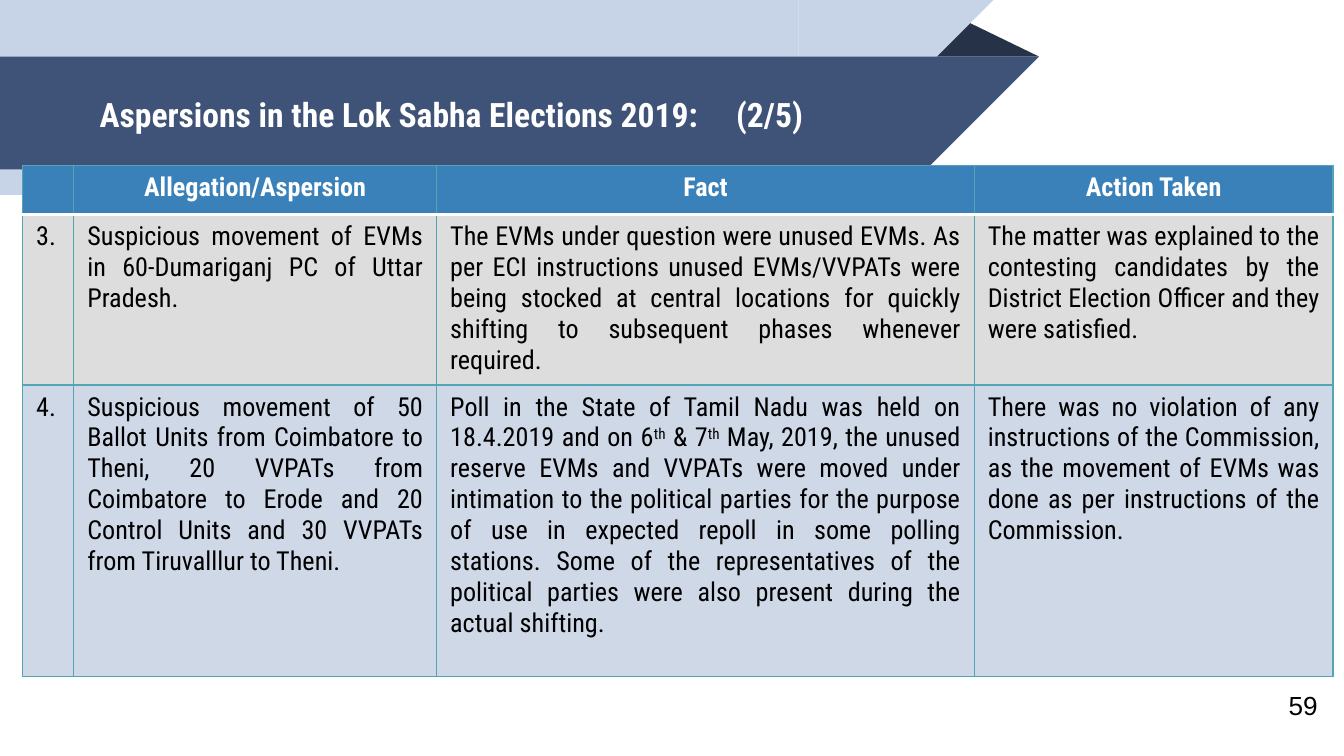
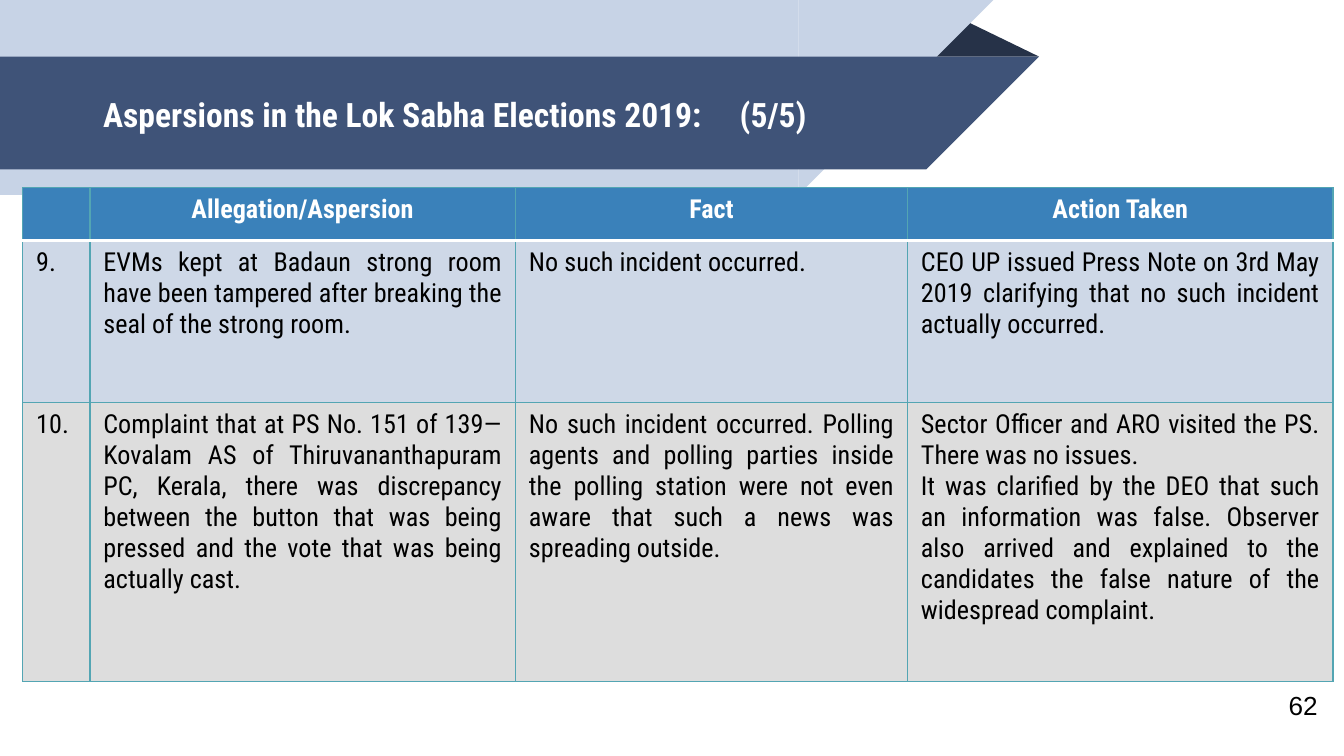
from dataclasses import dataclass
from typing import Any

from lxml import etree
from pptx import Presentation
from pptx.dml.color import RGBColor
from pptx.enum.shapes import MSO_SHAPE
from pptx.enum.text import MSO_ANCHOR, PP_ALIGN
from pptx.oxml.ns import qn
from pptx.util import Pt

RECT, WEDGE, FOLD = MSO_SHAPE.RECTANGLE, MSO_SHAPE.RIGHT_TRIANGLE, MSO_SHAPE.ISOSCELES_TRIANGLE
LEFT, CENTER, JUSTIFY = PP_ALIGN.LEFT, PP_ALIGN.CENTER, PP_ALIGN.JUSTIFY
MIDDLE = MSO_ANCHOR.MIDDLE

# Palette and type
DARK, NAVY, PALE = "263248", "3F5378", "C7D3E6"
BLUE, GREY, MIST, TEAL = "3A81BA", "DDDDDD", "CED8E7", "53A5B3"
WHITE, BLACK = "FFFFFF", "000000"
HEAD = {"name": "Roboto Condensed", "size": Pt(18), "bold": True}
LABEL = {"name": "Roboto Condensed", "size": Pt(14), "bold": True}
BODY = {"name": "Roboto Condensed", "size": Pt(14), "bold": False}
FOOT = {"name": "Arial", "size": Pt(14)}
PAD = {side: Pt(7.2) for side in
       ("margin_left", "margin_top", "margin_right", "margin_bottom")}
TITLE = "Aspersions in the Lok Sabha Elections 2019:"
HEADS = ("", "Allegation/Aspersion", "Fact", "Action Taken")


@dataclass
class Band:
    """A strip from the left edge that ends in a slanted wedge."""
    top: float
    width: float
    height: float
    color: str


@dataclass
class Row:
    height: float
    fill: str
    cells: tuple[str, ...]


@dataclass
class Page:
    count: str
    number: str
    left: float
    top: float
    cols: tuple[float, ...]
    head: float
    rows: tuple[Row, ...]


BANDS = (Band(0, 427.7, 104.4, PALE), Band(30.3, 496.1, 60.5, NAVY))

PAGES = (
    Page("(2/5)", "59", 46.3, 88.5, (27.4, 194.4, 288, 192.2), 26.5, (
        Row(90, GREY, (
            "3.",
            "Suspicious movement of EVMs in 60-Dumariganj PC of Uttar Pradesh.",
            "The EVMs under question were unused EVMs. As per ECI instructions "
            "unused EVMs/VVPATs were being stocked at central locations for "
            "quickly shifting to subsequent phases whenever required.",
            "The matter was explained to the contesting candidates by the "
            "District Election Officer and they were satisfied.")),
        Row(156, MIST, (
            "4.",
            "Suspicious movement of 50 Ballot Units from Coimbatore to Theni, "
            "20 VVPATs from Coimbatore to Erode and 20 Control Units and "
            "30 VVPATs from Tiruvalllur to Theni.",
            "Poll in the State of Tamil Nadu was held on 18.4.2019 and on "
            "6^th^ & 7^th^ May, 2019, the unused reserve EVMs and VVPATs were "
            "moved under intimation to the political parties for the purpose "
            "of use in expected repoll in some polling stations. Some of the "
            "representatives of the political parties were also present "
            "during the actual shifting.",
            "There was no violation of any instructions of the Commission, as "
            "the movement of EVMs was done as per instructions of the "
            "Commission.")))),
    Page("(5/5)", "62", 48.2, 100.6, (36, 228, 210, 228), 28.2, (
        Row(87, MIST, (
            "9.",
            "EVMs kept at Badaun strong room have been tampered after breaking "
            "the seal of the strong room.",
            "No such incident occurred.",
            "CEO UP issued Press Note on 3rd May 2019 clarifying that no such "
            "incident actually occurred.")),
        Row(149.5, GREY, (
            "10.",
            "Complaint that at PS No. 151 of 139—Kovalam AS of "
            "Thiruvananthapuram PC, Kerala, there was discrepancy between the "
            "button that was being pressed and the vote that was being "
            "actually cast.",
            "No such incident occurred. Polling agents and polling parties "
            "inside the polling station were not even aware that such a news "
            "was spreading outside.",
            "Sector Officer and ARO visited the PS. There was no issues.\n"
            "It was clarified by the DEO that such an information was false. "
            "Observer also arrived and explained to the candidates the false "
            "nature of the widespread complaint.")))),
)


def rgb(code: str) -> RGBColor:
    return RGBColor.from_string(code)


def apply(item: Any, form: dict[str, Any]) -> None:
    for key, value in form.items():
        setattr(item, key, value)


def write(para: Any, text: str, form: dict[str, Any], color: str) -> None:
    """Add runs; text between carets is raised."""
    for spot, piece in enumerate(text.split("^")):
        run = para.add_run()
        run.text = piece
        apply(run.font, form)
        run.font.color.rgb = rgb(color)
        if spot % 2:
            run._r.get_or_add_rPr().set("baseline", "30000")


def shape(slide: Any, kind: Any, box: tuple[float, ...], color: str) -> Any:
    item = slide.shapes.add_shape(kind, *map(Pt, box))
    item.shadow.inherit = False
    item.fill.solid()
    item.fill.fore_color.rgb = rgb(color)
    item.line.fill.background()
    return item


def banner(slide: Any) -> None:
    fold = shape(slide, FOLD, (495.4, 10.1, 61.2, 20.2), DARK)
    fold.adjustments[0] = 0.32
    for band in BANDS:
        shape(slide, RECT, (0, band.top, band.width, band.height), band.color)
        wedge = shape(slide, WEDGE,
                      (band.width, band.top, band.height, band.height), band.color)
        wedge.rotation = 180
        wedge._element.spPr.find(qn("a:xfrm")).set("flipH", "1")


def label(slide: Any, box: tuple[float, ...], text: str,
          form: dict[str, Any], color: str, stop: float = 0) -> None:
    frame = slide.shapes.add_textbox(*map(Pt, box)).text_frame
    apply(frame, {**PAD, "word_wrap": True, "vertical_anchor": MIDDLE})
    para = frame.paragraphs[0]
    if stop:
        tabs = etree.SubElement(para._p.get_or_add_pPr(), qn("a:tabLst"))
        etree.SubElement(tabs, qn("a:tab"), pos=str(Pt(stop)), algn="l")
    write(para, text, form, color)


def edge(cell: Any, side: str, color: str, width: float) -> None:
    line = etree.SubElement(cell._tc.get_or_add_tcPr(), qn("a:ln" + side),
                            w=str(Pt(width)))
    fill = etree.SubElement(line, qn("a:solidFill"))
    etree.SubElement(fill, qn("a:srgbClr"), val=color)


def fill_cell(cell: Any, text: str, row: int, col: int, color: str) -> None:
    # Borders go before the fill; a white rule sets head off from body
    for side in "LRTB":
        rule = (row, side) in ((0, "B"), (1, "T"))
        edge(cell, side, *((WHITE, 2) if rule else (TEAL, 0.75)))
    cell.fill.solid()
    cell.fill.fore_color.rgb = rgb(color)

    frame = cell.text_frame
    for spot, line in enumerate(text.split("\n")):
        para = frame.add_paragraph() if spot else frame.paragraphs[0]
        para.alignment = CENTER if row == 0 else JUSTIFY if col else LEFT
        if line:
            write(para, line, BODY if row else LABEL, BLACK if row else WHITE)
        else:
            etree.SubElement(para._p, qn("a:endParaRPr"), sz="1400")


def grid(slide: Any, page: Page) -> None:
    rows = (Row(page.head, BLUE, HEADS), *page.rows)
    box = (12.2, page.top, sum(page.cols), sum(row.height for row in rows))
    table = slide.shapes.add_table(len(rows), len(page.cols), *map(Pt, box)).table
    table.horz_banding = False
    for col, width in enumerate(page.cols):
        table.columns[col].width = Pt(width)
    for spot, row in enumerate(rows):
        table.rows[spot].height = Pt(row.height)
        for col, text in enumerate(row.cells):
            fill_cell(table.cell(spot, col), text, spot, col, row.fill)


def main() -> None:
    deck = Presentation()
    apply(deck, {"slide_width": Pt(720), "slide_height": Pt(405)})
    for page in PAGES:
        slide = deck.slides.add_slide(deck.slide_layouts[6])
        banner(slide)
        label(slide, (page.left, 31, 510 - page.left, 60.5),
              f"{TITLE}\t{page.count}", HEAD, WHITE, stop=341)
        label(slide, (683.3, 365, 36, 25.2), page.number, FOOT, BLACK)
        grid(slide, page)
    deck.save("out.pptx")


if __name__ == "__main__":
    main()
